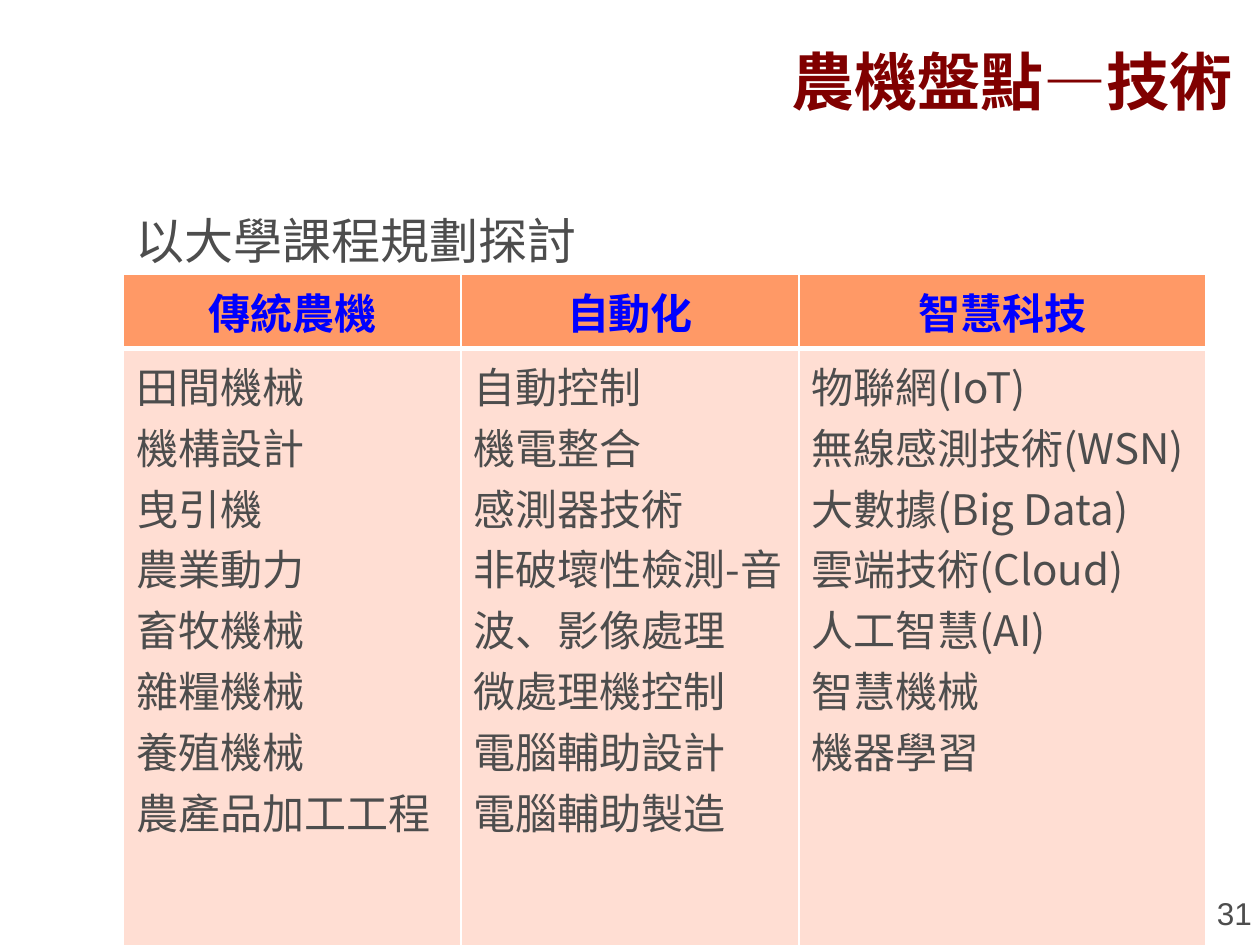
from lxml import etree
from pptx import Presentation
from pptx.dml.color import RGBColor
from pptx.enum.text import MSO_ANCHOR, PP_ALIGN
from pptx.oxml.ns import qn
from pptx.util import Inches, Pt

LEFT, CENTER, RIGHT = PP_ALIGN.LEFT, PP_ALIGN.CENTER, PP_ALIGN.RIGHT
MIDDLE, TOP = MSO_ANCHOR.MIDDLE, MSO_ANCHOR.TOP
CJK_FONT = "Noto Sans CJK SC"
GRAY = "4D4D4D"


def write_text(text_frame, text, size=24, font=CJK_FONT, color=GRAY, bold=False, align=LEFT):
    """Write each line of text as a paragraph in one format."""
    for index, line in enumerate(text.split("\n")):
        paragraph = text_frame.add_paragraph() if index else text_frame.paragraphs[0]
        paragraph.alignment = align
        run = paragraph.add_run()
        run.text = line
        run.font.size = Pt(size)
        run.font.name = font
        run.font.bold = bold
        run.font.color.rgb = RGBColor.from_string(color)
        east_asian = etree.SubElement(run.font._element, qn("a:ea"))
        east_asian.set("typeface", CJK_FONT)


def add_border(cell, side, width):
    line = etree.SubElement(cell._tc.get_or_add_tcPr(), qn(f"a:ln{side}"), w=str(Pt(width)))
    fill = etree.SubElement(line, qn("a:solidFill"))
    etree.SubElement(fill, qn("a:srgbClr"), val="FFFFFF")


presentation = Presentation()
presentation.slide_width = Inches(10)
presentation.slide_height = Inches(7.5)
slide = presentation.slides.add_slide(presentation.slide_layouts[6])

# Course table: heading and topics of each column
columns = [
    (2.68, "傳統農機",
     "田間機械\n機構設計\n曳引機\n農業動力\n畜牧機械\n雜糧機械\n養殖機械\n農產品加工工程"),
    (2.68, "自動化",
     "自動控制\n機電整合\n感測器技術\n非破壞性檢測-音波、影像處理\n"
     "微處理機控制\n電腦輔助設計\n電腦輔助製造"),
    (3.23, "智慧科技",
     "物聯網(IoT)\n無線感測技術(WSN)\n大數據(Big Data)\n雲端技術(Cloud)\n"
     "人工智慧(AI)\n智慧機械\n機器學習"),
]
table = slide.shapes.add_table(
    2, len(columns), Inches(0.98), Inches(2.18), Inches(8.59), Inches(5.32)).table
table.rows[0].height = Inches(0.58)
table.rows[1].height = Inches(4.74)
for column_index, (width, heading, topics) in enumerate(columns):
    table.columns[column_index].width = Inches(width)
    header_cell = table.cell(0, column_index)
    topic_cell = table.cell(1, column_index)
    write_text(header_cell.text_frame, heading, color="0000FF", bold=True, align=CENTER)
    write_text(topic_cell.text_frame, topics)
    for cell, fill_color, thick_side in (
            (header_cell, "FF9966", "B"), (topic_cell, "FFDED3", "T")):
        for side in "LRTB":
            add_border(cell, side, 3 if side == thick_side else 1)
        cell.fill.solid()
        cell.fill.fore_color.rgb = RGBColor.from_string(fill_color)

# Title, subtitle and page number
text_boxes = [
    ((1.3, 0.36, 8.58, 0.56), MIDDLE, True, "農機盤點—技術",
     dict(size=36, font="Arial", color="800000", bold=True, align=RIGHT)),
    ((0.98, 1.62, 3.74, 0.57), TOP, False, "以大學課程規劃探討", dict(size=28)),
    ((9.56, 7.05, 0.48, 0.4), TOP, False, "31", dict(size=18, font="Arial")),
]
for position, anchor, wrap, text, text_format in text_boxes:
    text_box = slide.shapes.add_textbox(*(Inches(length) for length in position))
    text_box.text_frame.vertical_anchor = anchor
    text_box.text_frame.word_wrap = wrap
    write_text(text_box.text_frame, text, **text_format)

presentation.save("out.pptx")
